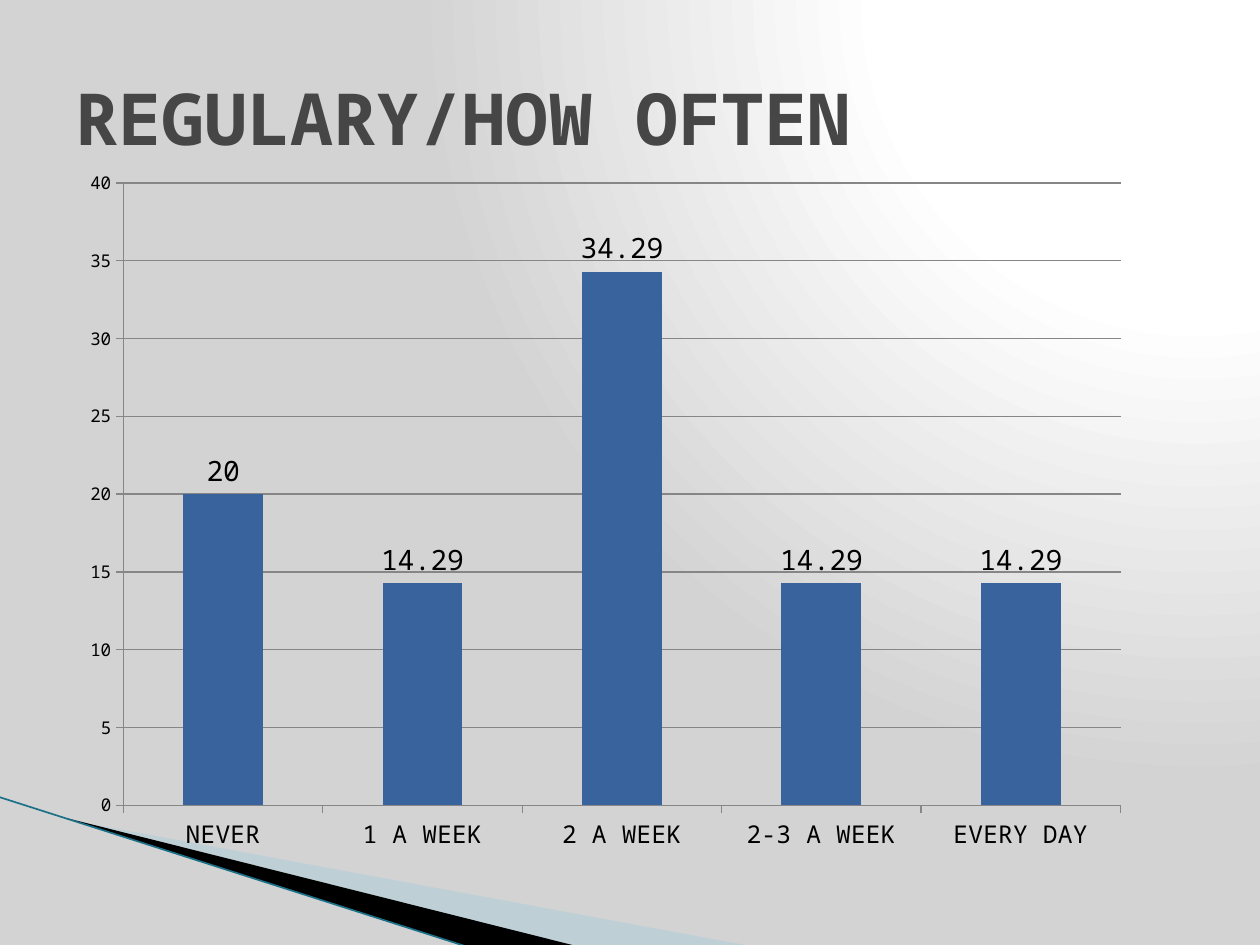
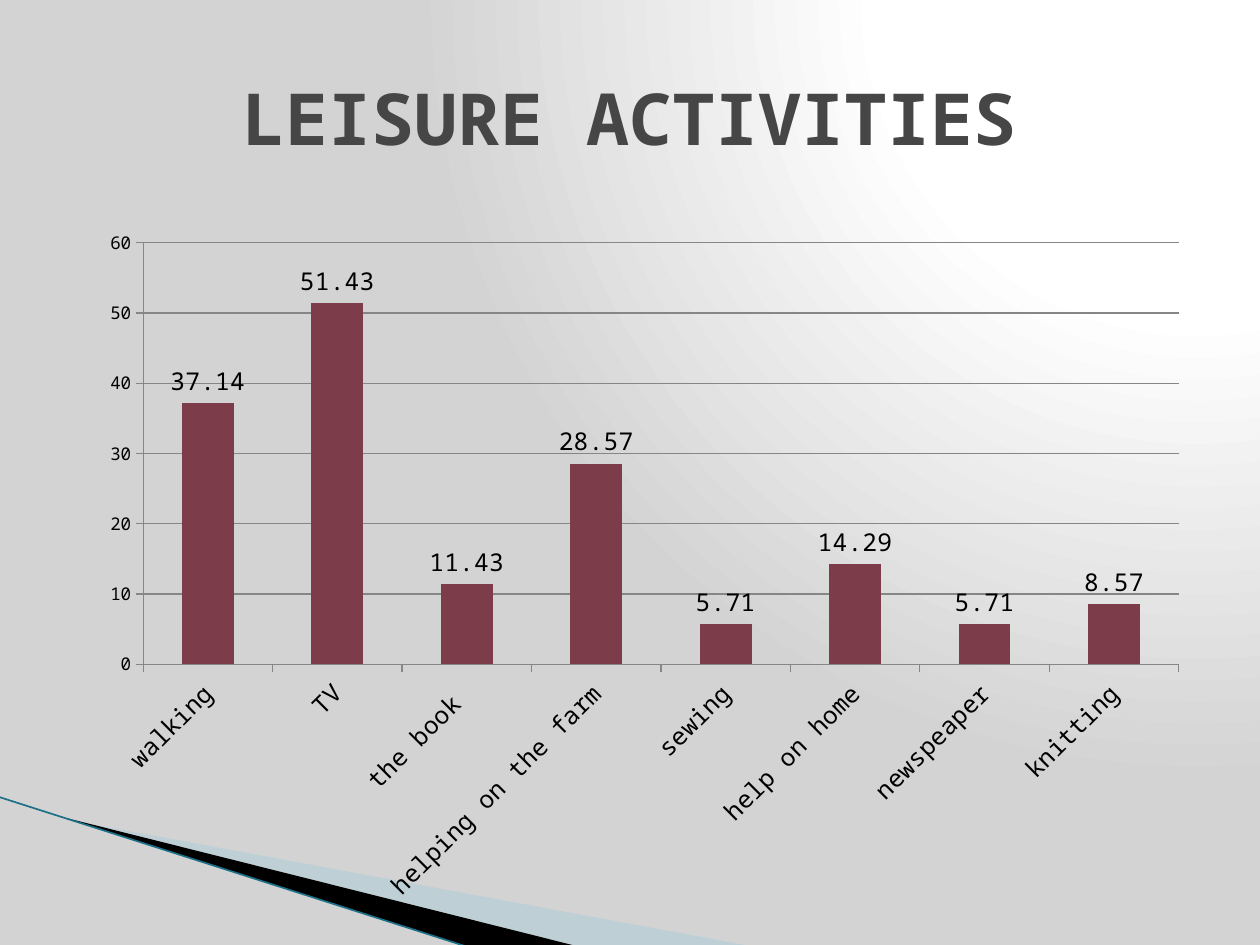
import dataclasses
import typing

import lxml.etree
import pptx
import pptx.chart.data
import pptx.dml.color
import pptx.enum.chart
import pptx.enum.shapes
import pptx.enum.text
import pptx.oxml
import pptx.oxml.ns
import pptx.util

PX = 914400 / 126
Point = tuple[int, int]
Box = tuple[int, int, int, int]


def px(length: int) -> int:
    return round(length * PX)


def rgb(code: str) -> pptx.dml.color.RGBColor:
    return pptx.dml.color.RGBColor.from_string(code)


@dataclasses.dataclass(frozen=True)
class Theme:
    font: str = "Noto Sans Mono"
    title_color: str = "464646"
    text_color: str = "000000"
    grid_color: str = "868686"
    glow: str = "FFFFFF"
    backdrop: str = "D3D3D3"
    edge: str = "1C7087"
    title_size: int = 41
    axis_size: int = 10
    category_size: int = 14


@dataclasses.dataclass(frozen=True)
class Wedge:
    frame: Box
    points: tuple[Point, ...]
    color: str
    opacity: int = 100


@dataclasses.dataclass(frozen=True)
class Survey:
    title: str
    align: pptx.enum.text.PP_ALIGN
    box: Box
    answers: dict[str, float]
    bar_color: str
    label_size: int
    top: int
    step: int
    turn: int = 0


THEME = Theme()
TITLE_BOX = {"left": px(63), "top": px(38), "width": px(1134), "height": px(158)}
WEDGES = (
    Wedge((98, 689, 524, 199),
          ((69, 820), (750, 946), (575, 946), (69, 819)), "A0CBDC", 40),
    Wedge((-8, 798, 524, 116),
          ((66, 818), (576, 946), (469, 947), (67, 819)), "000000"),
)
EDGE = (-1, 797, 468, 947)
SURVEYS = (
    Survey(
        "REGULARY/HOW OFTEN", pptx.enum.text.PP_ALIGN.LEFT, (69, 157, 1073, 709),
        {"NEVER": 20, "1 A WEEK": 14.29, "2 A WEEK": 34.29,
         "2-3 A WEEK": 14.29, "EVERY DAY": 14.29},
        "39639D", 16, 40, 5,
    ),
    Survey(
        "LEISURE ACTIVITIES", pptx.enum.text.PP_ALIGN.CENTER, (88, 217, 1113, 699),
        {"walking": 37.14, "TV": 51.43, "the book ": 11.43,
         "helping on the farm": 28.57, "sewing": 5.71, "help on home": 14.29,
         "newspeaper": 5.71, "knitting": 8.57},
        "7D3C4A", 14, 60, 10, -45,
    ),
)


def apply(target: typing.Any, values: dict[str, typing.Any]) -> None:
    for name, value in values.items():
        setattr(target, name, value)


def set_font(font: typing.Any, size: int, color: str, bold: bool = False) -> None:
    apply(font, {"name": THEME.font, "size": pptx.util.Pt(size), "bold": bold})
    font.color.rgb = rgb(color)


def paint_backdrop(master: typing.Any) -> None:
    master.background.fill.gradient()
    gradient = master.element.find(".//" + pptx.oxml.ns.qn("a:gradFill"))
    stops = ((0, THEME.glow), (40, THEME.glow), (100, THEME.backdrop))
    stop_xml = "".join(
        f'<a:gs pos="{place * 1000}"><a:srgbClr val="{color}"/></a:gs>'
        for place, color in stops
    )
    radial = pptx.oxml.parse_xml(
        f'<a:gradFill {pptx.oxml.ns.nsdecls("a")} rotWithShape="1">'
        f'<a:gsLst>{stop_xml}</a:gsLst><a:path path="circle">'
        '<a:fillToRect l="95000" t="-106000" r="5000" b="206000"/>'
        '</a:path></a:gradFill>'
    )
    gradient.getparent().replace(gradient, radial)


def set_frame(shape: typing.Any, wedge: Wedge) -> None:
    left, top, width, height = wedge.frame
    outline = shape.element.spPr.find(".//" + pptx.oxml.ns.qn("a:path"))
    outline.set("w", str(width))
    outline.set("h", str(height))
    corners = outline.iter(pptx.oxml.ns.qn("a:pt"))
    for corner, (x, y) in zip(corners, wedge.points):
        corner.set("x", str(x - left))
        corner.set("y", str(y - top))
    for name, length in zip(("left", "top", "width", "height"), wedge.frame):
        setattr(shape, name, px(length))


def draw_wedge(page: typing.Any, wedge: Wedge) -> None:
    builder = page.shapes.build_freeform(*wedge.points[0], scale=PX)
    builder.add_line_segments(wedge.points[1:], close=True)
    shape = builder.convert_to_shape()
    set_frame(shape, wedge)
    shape.shadow.inherit = False
    shape.line.fill.background()
    shape.fill.solid()
    shape.fill.fore_color.rgb = rgb(wedge.color)
    if wedge.opacity < 100:
        color = shape.element.spPr.find(".//" + pptx.oxml.ns.qn("a:srgbClr"))
        alpha = lxml.etree.SubElement(color, pptx.oxml.ns.qn("a:alpha"))
        alpha.set("val", str(wedge.opacity * 1000))


def draw_corner(page: typing.Any) -> None:
    for wedge in WEDGES:
        draw_wedge(page, wedge)
    edge = page.shapes.add_connector(
        pptx.enum.shapes.MSO_CONNECTOR.STRAIGHT, *map(px, EDGE)
    )
    edge.line.color.rgb = rgb(THEME.edge)
    edge.line.width = pptx.util.Pt(0.95)
    lxml.etree.SubElement(edge.element.spPr, pptx.oxml.ns.qn("a:effectLst"))


def draw_title(page: typing.Any, survey: Survey) -> None:
    title = page.shapes.title
    apply(title, TITLE_BOX)
    apply(title.text_frame, {
        "text": survey.title,
        "word_wrap": True,
        "auto_size": pptx.enum.text.MSO_AUTO_SIZE.NONE,
        "vertical_anchor": pptx.enum.text.MSO_ANCHOR.MIDDLE,
    })
    para = title.text_frame.paragraphs[0]
    para.alignment = survey.align
    set_font(para.runs[0].font, THEME.title_size, THEME.title_color, True)


def draw_line(line: typing.Any) -> None:
    line.color.rgb = rgb(THEME.grid_color)
    line.width = pptx.util.Pt(0.75)


def draw_chart(page: typing.Any, survey: Survey) -> None:
    data = pptx.chart.data.CategoryChartData()
    data.categories = list(survey.answers)
    data.add_series("Series 1", list(survey.answers.values()))
    chart = page.shapes.add_chart(
        pptx.enum.chart.XL_CHART_TYPE.COLUMN_CLUSTERED, *map(px, survey.box), data
    ).chart
    apply(chart, {"has_title": False, "has_legend": False})
    set_font(chart.font, THEME.axis_size, THEME.text_color)

    apply(chart.value_axis, {
        "minimum_scale": 0,
        "maximum_scale": survey.top,
        "major_unit": survey.step,
        "has_major_gridlines": True,
    })
    draw_line(chart.value_axis.major_gridlines.format.line)
    sizes = ((chart.category_axis, THEME.category_size),
             (chart.value_axis, THEME.axis_size))
    for axis, size in sizes:
        axis.major_tick_mark = pptx.enum.chart.XL_TICK_MARK.OUTSIDE
        draw_line(axis.format.line)
        set_font(axis.tick_labels.font, size, THEME.text_color)
    if survey.turn:
        labels_xml = chart.category_axis.tick_labels.font._element.getparent()
        body = labels_xml.getparent().getparent().find(pptx.oxml.ns.qn("a:bodyPr"))
        body.set("rot", str(survey.turn * 60000))

    plot = chart.plots[0]
    apply(plot, {"gap_width": 150, "vary_by_categories": False,
                 "has_data_labels": True})
    bars = plot.series[0].format.fill
    bars.solid()
    bars.fore_color.rgb = rgb(survey.bar_color)
    apply(plot.data_labels, {
        "show_value": True,
        "number_format": "General",
        "number_format_is_linked": False,
        "position": pptx.enum.chart.XL_LABEL_POSITION.OUTSIDE_END,
    })
    set_font(plot.data_labels.font, survey.label_size, THEME.text_color)


def main() -> None:
    deck = pptx.Presentation()
    apply(deck, {"slide_width": px(1260), "slide_height": px(945)})
    paint_backdrop(deck.slide_master)
    for survey in SURVEYS:
        page = deck.slides.add_slide(deck.slide_layouts.get_by_name("Title Only"))
        draw_corner(page)
        draw_title(page, survey)
        draw_chart(page, survey)
    deck.save("out.pptx")


if __name__ == "__main__":
    main()
